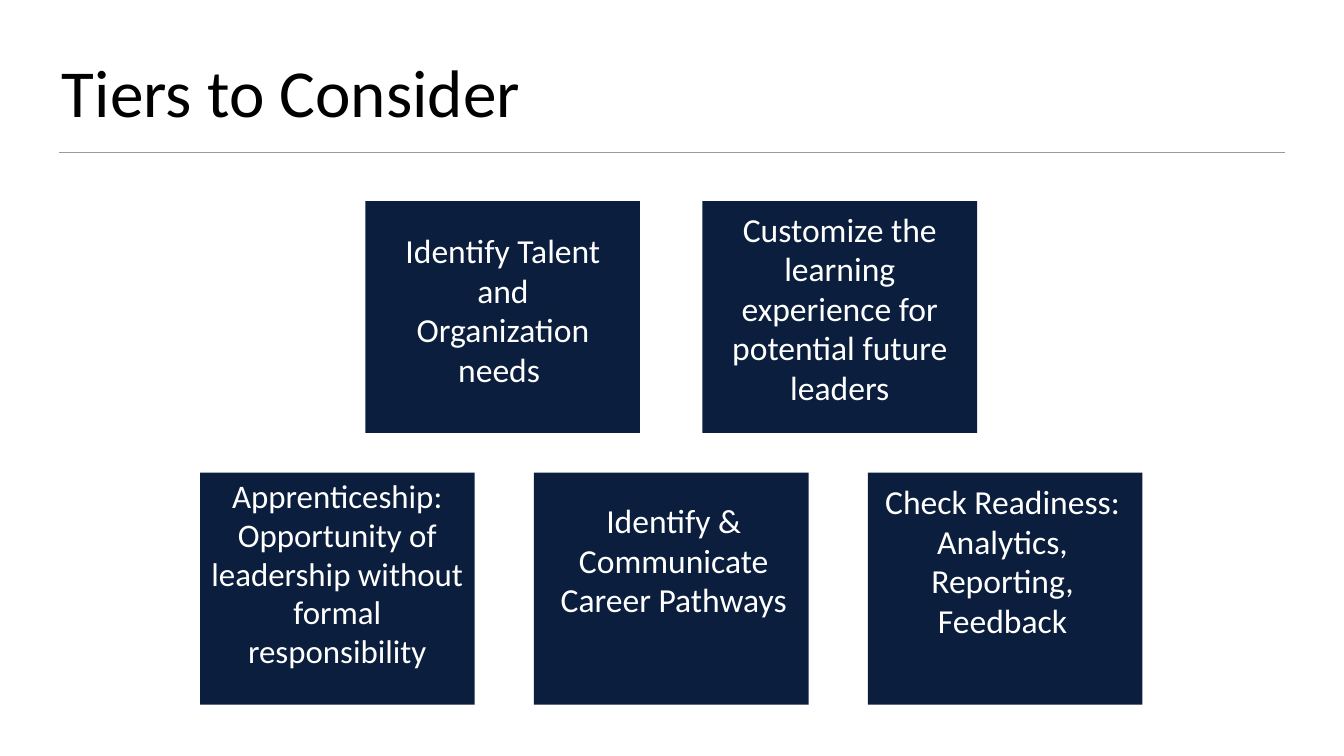
from dataclasses import dataclass
from lxml import etree
from pptx import Presentation
from pptx.dml.color import RGBColor as RGB
from pptx.enum.shapes import MSO_CONNECTOR as CONN, MSO_SHAPE as SHAPE
from pptx.enum.text import MSO_ANCHOR as ANCHOR, MSO_AUTO_SIZE as AUTO, PP_ALIGN as ALIGN
from pptx.oxml.ns import qn
from pptx.util import Inches, Pt


@dataclass(frozen=True)
class Theme:
    face: str = "Calibri"
    navy: RGB = RGB(0x0B, 0x1E, 0x3D)
    white: RGB = RGB(0xFF, 0xFF, 0xFF)
    black: RGB = RGB(0, 0, 0)
    gray: RGB = RGB(0x9A, 0x9A, 0x9A)
    title: int = 96
    body: int = 48
    small: int = 47


THEME = Theme()
CARD_W, CARD_H = 5.45, 4.6
ROWS = [
    (7.25, 3.99, 6.69, [
        (0.39, 0.57, 4.68, 3.32, THEME.body, ["Identify Talent and Organization needs "]),
        (0.17, 0.14, 5.11, 4.13, THEME.body,
         ["Customize the learning experience for potential future leaders"]),
    ]),
    (3.97, 9.38, 6.625, [
        (0.16, 0.05, 5.13, 3.99, THEME.small,
         ["Apprenticeship: Opportunity of leadership without formal responsibility"]),
        (0.1, 0.53, 5.35, 2.52, THEME.body, ["Identify & Communicate Career Pathways"]),
        (0, 0.16, 5.35, 4.13, THEME.body,
         ["Check Readiness:", "Analytics, Reporting, Feedback"]),
    ]),
]


def style(par, size, color, align):
    par.alignment = align
    par.font.name = THEME.face
    par.font.size = Pt(size)
    par.font.color.rgb = color


def inset(frame, size):
    frame.margin_left = frame.margin_right = Inches(size)
    frame.margin_top = frame.margin_bottom = Inches(size)
    frame.word_wrap = True


def add_title(slide, text):
    title = slide.shapes.title
    title.left, title.top = Inches(1.17), Inches(0.51)
    title.width, title.height = Inches(24.32), Inches(2.15)
    frame = title.text_frame
    frame.text = text
    frame.auto_size = AUTO.NONE
    frame.vertical_anchor = ANCHOR.BOTTOM
    inset(frame, 0.06)
    style(frame.paragraphs[0], THEME.title, THEME.black, ALIGN.LEFT)


def add_rule(slide):
    rule = slide.shapes.add_connector(
        CONN.STRAIGHT, Inches(1.17), Inches(3.03), Inches(25.5), Inches(3.03))
    rule.line.color.rgb = THEME.gray
    rule.line.width = Pt(1)
    etree.SubElement(rule._element.spPr, qn("a:effectLst"))


def add_card(slide, left, top):
    card = slide.shapes.add_shape(
        SHAPE.RECTANGLE, Inches(left), Inches(top), Inches(CARD_W), Inches(CARD_H))
    card.shadow.inherit = False
    card.fill.solid()
    card.fill.fore_color.rgb = THEME.navy
    card.line.fill.background()


def add_label(slide, left, top, width, height, size, lines):
    box = slide.shapes.add_textbox(
        Inches(left), Inches(top), Inches(width), Inches(height))
    frame = box.text_frame
    inset(frame, 0.05)
    frame.auto_size = AUTO.SHAPE_TO_FIT_TEXT
    frame.text = "\n".join(lines)
    for par in frame.paragraphs:
        par.line_spacing = 0.98
        style(par, size, THEME.white, ALIGN.CENTER)


def main():
    deck = Presentation()
    deck.slide_width, deck.slide_height = Inches(26.67), Inches(15)
    slide = deck.slides.add_slide(deck.slide_layouts[5])
    add_rule(slide)
    add_title(slide, "Tiers to Consider")
    for left, top, step, cards in ROWS:
        for col, (dx, dy, width, height, size, lines) in enumerate(cards):
            x = left + col * step
            add_card(slide, x, top)
            add_label(slide, x + dx, top + dy, width, height, size, lines)
    deck.save("out.pptx")


if __name__ == "__main__":
    main()
